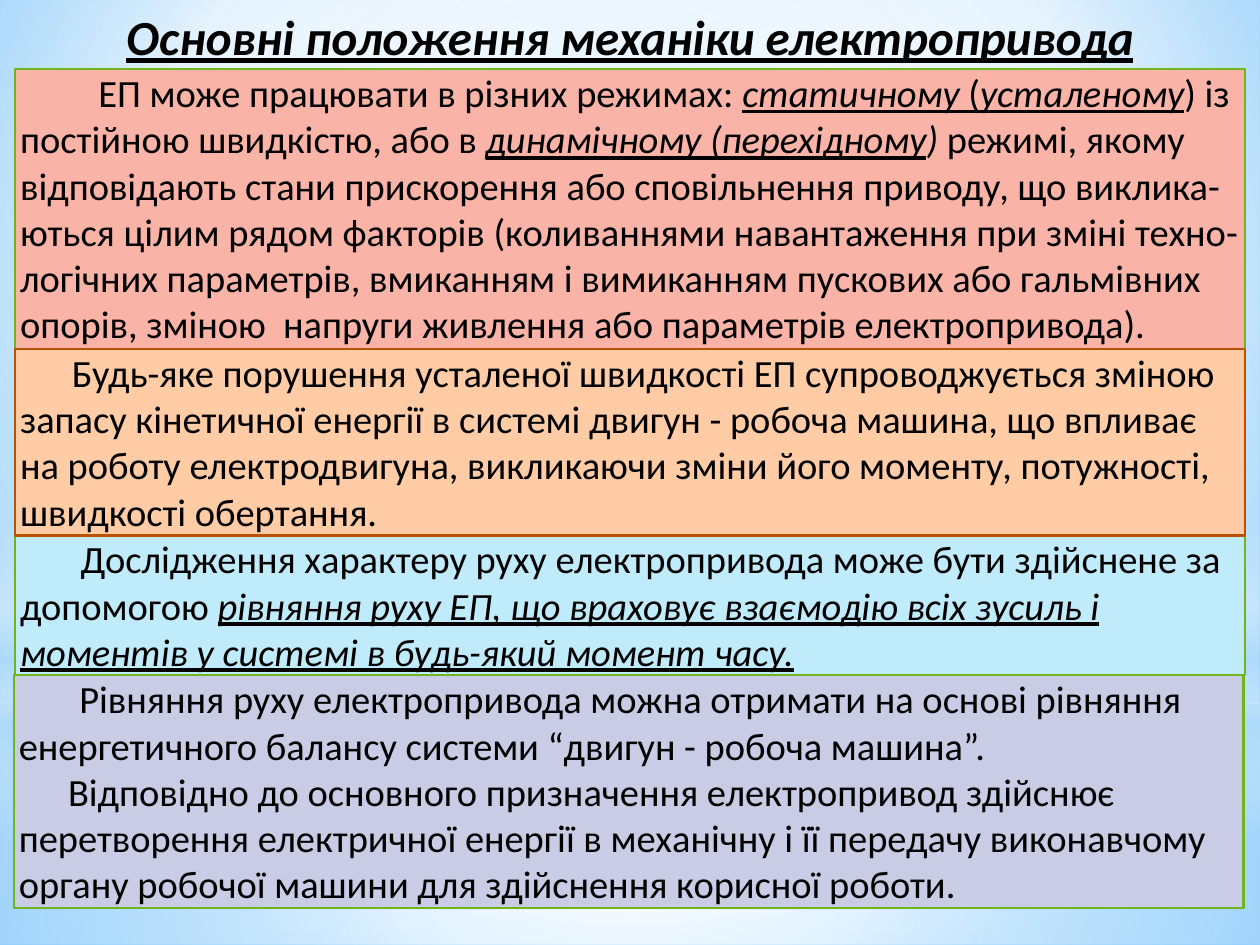
from lxml import etree
from pptx import Presentation
from pptx.dml.color import RGBColor
from pptx.enum.shapes import MSO_SHAPE
from pptx.enum.text import MSO_ANCHOR, MSO_AUTO_SIZE, PP_ALIGN
from pptx.oxml.ns import qn
from pptx.util import Inches, Pt

RECT, OVAL = MSO_SHAPE.RECTANGLE, MSO_SHAPE.OVAL
TOP, CENTER, LEFT = MSO_ANCHOR.TOP, PP_ALIGN.CENTER, PP_ALIGN.LEFT
GROW = MSO_AUTO_SIZE.SHAPE_TO_FIT_TEXT
GREEN, BROWN = "72B41D", "BB5203"
MIDDLE = (50, 50, 50, 50)


def rgb(value):
    return RGBColor.from_string(value)


class Deck:
    font, color = "Calibri", "000000"
    title_size, body_size = 28, 22
    first_top, line_height = 0.55, 0.37
    width = 9.76

    def __init__(self):
        self.prs = Presentation()
        self.prs.slide_width, self.prs.slide_height = Inches(10), Inches(7.5)
        self.s = self.prs.slides.add_slide(self.prs.slide_layouts[5])

    def gradient(self, fill, owner, stops, focus=None):
        """Stops are (position, colour, opacity) in percent; no focus means vertical."""
        fill.gradient()
        grad = next(owner.element.iter(qn("a:gradFill")))
        for child in list(grad):
            grad.remove(child)
        stop_list = etree.SubElement(grad, qn("a:gsLst"))
        for pos, color, opacity in stops:
            stop = etree.SubElement(stop_list, qn("a:gs"), pos=str(pos * 1000))
            clr = etree.SubElement(stop, qn("a:srgbClr"), val=color)
            if opacity < 100:
                etree.SubElement(clr, qn("a:alpha"), val=str(opacity * 1000))
        if focus is None:
            etree.SubElement(grad, qn("a:lin"), ang="5400000", scaled="0")
        else:
            path = etree.SubElement(grad, qn("a:path"))
            path.set("path", "circle")
            sides = {k: str(v * 1000) for k, v in zip("ltrb", focus)}
            etree.SubElement(path, qn("a:fillToRect"), **sides)

    def background(self, stops, focus):
        self.gradient(self.s.background.fill, self.s, stops, focus)

    def glow(self, kind, top, height, stops, focus=None):
        sp = self.s.shapes.add_shape(kind, 0, Inches(top), Inches(10), Inches(height))
        sp.shadow.inherit = False
        sp.line.fill.background()
        self.gradient(sp.fill, sp, stops, focus)

    def frame(self, sp, side, edge):
        tf = sp.text_frame
        tf.word_wrap, tf.auto_size, tf.vertical_anchor = True, GROW, TOP
        tf.margin_left = tf.margin_right = Inches(side)
        tf.margin_top = tf.margin_bottom = Inches(edge)
        return tf

    def style_run(self, r, size, marks=""):
        r.font.name, r.font.size = self.font, Pt(size)
        r.font.color.rgb = rgb(self.color)
        r.font.bold, r.font.italic, r.font.underline = (m in marks for m in "biu")

    def title(self, text):
        sp = self.s.shapes.title
        sp.left, sp.top = Inches(0.12), Inches(0)
        sp.width, sp.height = Inches(self.width), Inches(0.57)
        tf = self.frame(sp, 0, 0.05)
        tf.text = text
        tf.paragraphs[0].alignment = CENTER
        self.style_run(tf.paragraphs[0].runs[0], self.title_size, "biu")
        sp.element.getparent().append(sp.element)  # bring to front

    def panel(self, row, lines, fill, line, paragraphs, left=0.12):
        """Each paragraph is (first-line indent, [(text, marks), ...])."""
        top = self.first_top + row * self.line_height
        sp = self.s.shapes.add_shape(RECT, Inches(left), Inches(top),
                                     Inches(self.width), Inches(lines * self.line_height))
        sp.shadow.inherit = False
        sp.fill.solid()
        sp.fill.fore_color.rgb = rgb(fill)
        sp.line.color.rgb, sp.line.width = rgb(line), Pt(1.25)
        tf = self.frame(sp, 0.04, 0)
        for i, (indent, parts) in enumerate(paragraphs):
            p = tf.add_paragraph() if i else tf.paragraphs[0]
            p.alignment = LEFT
            p._p.get_or_add_pPr().set("indent", str(Inches(indent)))
            for text, marks in parts:
                r = p.add_run()
                r.text = text
                self.style_run(r, self.body_size, marks)


def main():
    deck = Deck()

    # Blue backdrop with soft glows
    deck.background([(0, "9ED5FF", 100), (60, "FFFFFF", 100), (100, "5BB9FF", 100)],
                    (20, 10, 20, 60))
    deck.glow(RECT, 5.58, 1.92,
              [(0, "FFFFFF", 91), (37, "FFFFFF", 76), (100, "B4DCFA", 79)], MIDDLE)
    deck.glow(RECT, 0, 5.58,
              [(0, "FFFFFF", 89), (48, "FFFFFF", 62), (100, "B4DCFA", 79)], MIDDLE)
    deck.glow(RECT, 4.12, 2.5,
              [(0, "FFFFFF", 0), (29, "FFFFFF", 30), (45, "B4DCFA", 40),
               (55, "FFFFFF", 26), (65, "B4DCFA", 60), (100, "FFFFFF", 0)])
    deck.glow(OVAL, 1.75, 5.58, [(0, "FFFFFF", 100), (56, "FFFFFF", 0)], MIDDLE)

    # Stacked panels, placed by text line; the brown border overlaps its neighbours
    deck.panel(10, 3, "BFEBFA", GREEN, [(0.48, [
        ("Дослідження характеру руху електропривода може бути здійснене за допомогою ", ""),
        ("рівняння руху ЕП, що враховує взаємодію всіх зусиль і моментів у системі "
         "в будь-який момент часу.", "iu"),
    ])])
    deck.panel(0, 6, "F9B3A7", GREEN, [(0.62, [
        ("ЕП може працювати в різних режимах: ", ""),
        ("статичному ", "iu"),
        ("(", "u"),
        ("усталеному", "iu"),
        (") із постійною швидкістю, або в ", ""),
        ("динамічному (перехідному", "iu"),
        (") ", "i"),
        ("режимі, якому відповідають стани прискорення або сповільнення приводу, "
         "що виклика-ються цілим рядом факторів (коливаннями навантаження при зміні "
         "техно-логічних параметрів, вмиканням і вимиканням пускових або гальмівних "
         "опорів, зміною  напруги живлення або параметрів електропривода).", ""),
    ])])
    deck.panel(6, 4, "FFCCA6", BROWN, [(0.41, [
        ("Будь-яке порушення усталеної швидкості ЕП супроводжується зміною запасу "
         "кінетичної енергії в системі двигун - робоча машина, що впливає на роботу "
         "електродвигуна, викликаючи зміни його моменту, потужності, швидкості "
         "обертання.", ""),
    ])])
    deck.panel(13, 5, "C8CDE5", GREEN, [
        (0.48, [("Рівняння руху електропривода можна отримати на основі рівняння "
                 "енергетичного балансу системи “двигун - робоча машина”.", "")]),
        (0.39, [("Відповідно до основного призначення електропривод здійснює "
                 "перетворення електричної енергії в механічну і її передачу "
                 "виконавчому органу робочої машини для здійснення корисної роботи.", "")]),
    ], left=0.11)

    # Heading
    deck.title("Основні положення механіки електропривода")

    deck.prs.save("out.pptx")


if __name__ == "__main__":
    main()
